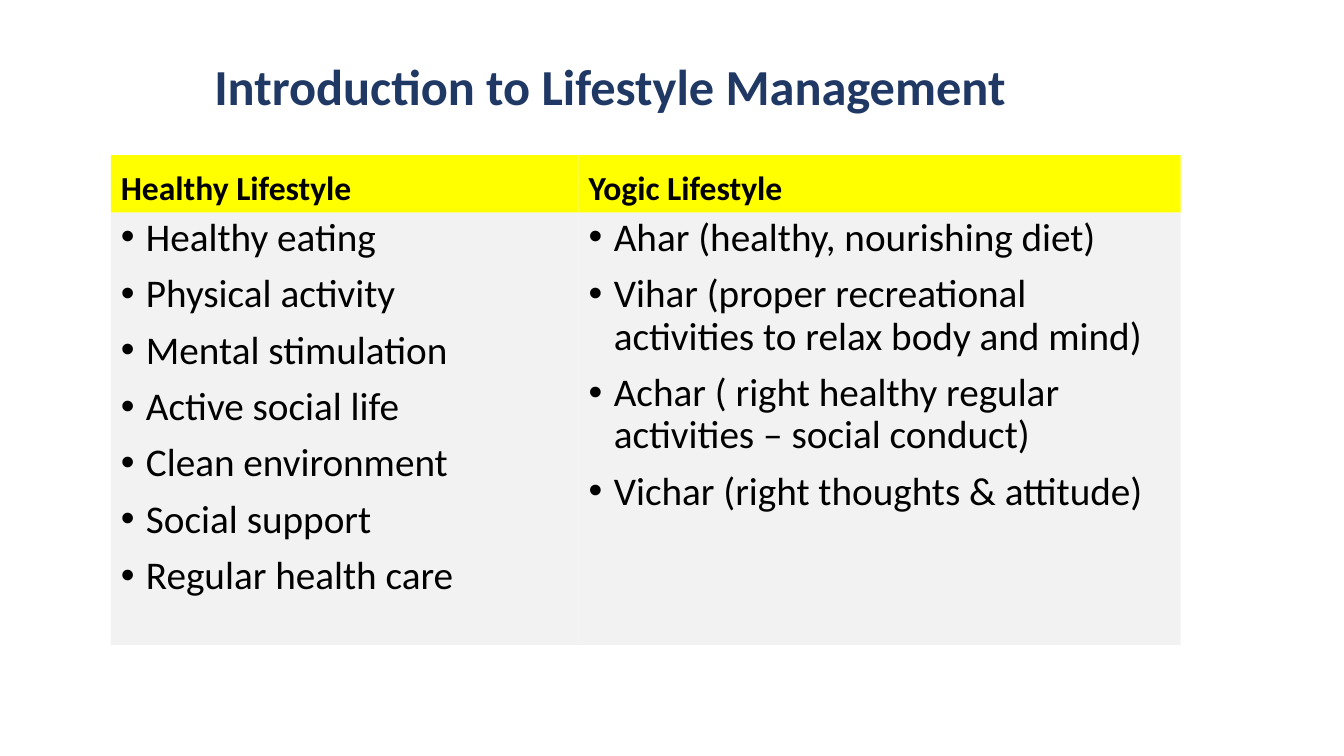
"""Build the slide comparing a healthy lifestyle with a yogic lifestyle."""
from pptx import Presentation
from pptx.dml.color import RGBColor
from pptx.enum.shapes import MSO_SHAPE
from pptx.enum.text import MSO_ANCHOR as ANCHOR, PP_ALIGN as ALIGN
from pptx.oxml.ns import qn
from pptx.util import Inches, Pt
from lxml import etree


def rgb(value):
    return RGBColor.from_string(value)


def add_block(x, y, w, h, lines, size, color="000000", fill=None, bold=False,
              anchor=ANCHOR.TOP, align=ALIGN.LEFT, before=10, bullet=False):
    sp = s.shapes.add_shape(MSO_SHAPE.RECTANGLE, Inches(x), Inches(y), Inches(w), Inches(h))
    sp.shadow.inherit = False
    sp.line.fill.background()
    if fill:
        sp.fill.solid()
        sp.fill.fore_color.rgb = rgb(fill)
    else:
        sp.fill.background()
    tf = sp.text_frame
    tf.word_wrap = True
    tf.vertical_anchor = anchor
    tf.text = "\n".join(lines)
    for p in tf.paragraphs:
        p.alignment = align
        p.line_spacing = 0.9
        p.space_before = Pt(before)
        p.font.name = "Calibri"
        p.font.size = Pt(size)
        p.font.bold = bold
        p.font.color.rgb = rgb(color)
        if bullet:
            pPr = p._p.get_or_add_pPr()
            pPr.set("marL", str(Inches(0.25)))
            pPr.set("indent", str(-Inches(0.25)))
            font = etree.Element(qn("a:buFont"), typeface="Arial")
            char = etree.Element(qn("a:buChar"), char="•")
            pPr.find(qn("a:defRPr")).addprevious(font)
            font.addnext(char)


prs = Presentation()
prs.slide_width = Inches(13.33)
prs.slide_height = Inches(7.5)
s = prs.slides.add_slide(prs.slide_layouts[6])

add_block(0.36, 0.29, 11.5, 0.91, ["Introduction to Lifestyle Management "], 36,
          color="203864", bold=True, anchor=ANCHOR.BOTTOM, align=ALIGN.CENTER, before=0)

columns = [
    (4.64, "Healthy Lifestyle", [
        "Healthy eating",
        "Physical activity",
        "Mental stimulation",
        "Active social life",
        "Clean environment",
        "Social support",
        "Regular health care",
    ]),
    (5.97, "Yogic Lifestyle", [
        "Ahar (healthy, nourishing diet)",
        "Vihar (proper recreational activities to relax body and mind)",
        "Achar ( right healthy regular activities – social conduct)",
        "Vichar (right thoughts & attitude)",
    ]),
]
top, header_height = 1.54, 0.57
left = 1.1
for width, heading, points in columns:
    add_block(left, top, width, header_height, [heading], 24,
              fill="FFFF00", bold=True, anchor=ANCHOR.BOTTOM)
    add_block(left, top + header_height, width, 4.29, points, 28,
              fill="F2F2F2", bullet=True)
    left += width

prs.save("out.pptx")
